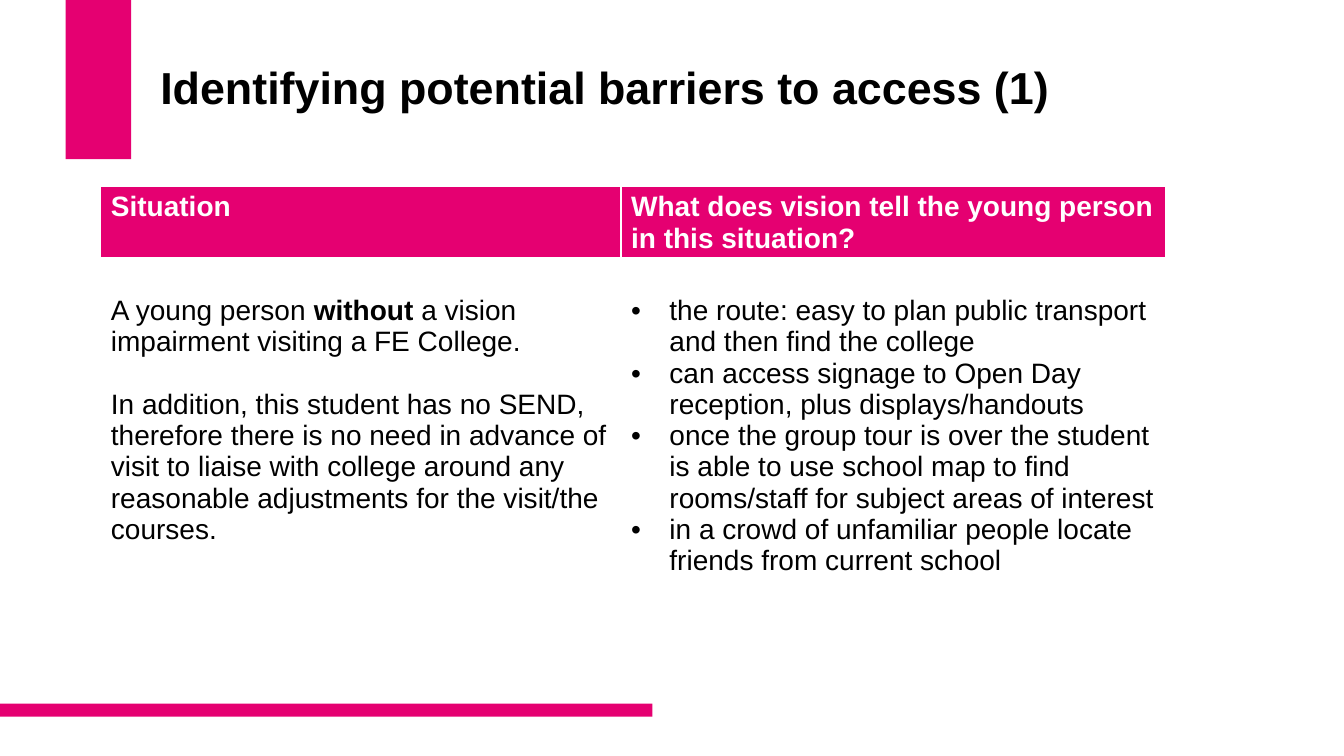
from dataclasses import dataclass

from lxml.etree import SubElement
from pptx import Presentation
from pptx.dml.color import RGBColor
from pptx.enum.shapes import MSO_SHAPE
from pptx.enum.text import MSO_ANCHOR, PP_ALIGN
from pptx.oxml import parse_xml
from pptx.oxml.ns import nsdecls, qn
from pptx.util import Inches, Pt

TITLE = "Identifying potential barriers to access (1)"
HEADINGS = ["Situation", "What does vision tell the young person in this situation?"]
SITUATION = [
    [("A young person ", False), ("without ", True),
     ("a vision impairment visiting a\u00a0FE College.", False)],
    [("In addition, this student has no SEND, therefore there is no need in advance of "
      "visit to liaise with college around any reasonable adjustments for the visit/the "
      "courses.", False)],
]
VISION_TELLS = [
    "the route: easy to plan public transport and then find the college",
    "can access signage to Open Day reception, plus displays/handouts",
    "once the group tour is over the student is able to use school map to find "
    "rooms/staff for subject areas of interest",
    "in a crowd of unfamiliar people locate friends from current school",
]

SLIDE_SIZE = (13.33, 7.5)
ACCENT_BARS = [(0.65, 0, 0.65, 1.58), (0, 6.98, 6.47, 0.13)]
TITLE_BOX = (1.49, 0.4, 9.6, 1.45)
TITLE_BOTTOM_INSET = 0.51
TABLE_ORIGIN = (1, 1.85)
COLUMN_WIDTHS = (5.16, 5.4)
ROW_HEIGHTS = (0.69, 4.21)
BODY_TOP_INSET = 0.36
BULLET_INDENT = 0.38


@dataclass(frozen=True)
class Theme:
    accent: RGBColor = RGBColor(0xE5, 0x00, 0x71)
    paper: RGBColor = RGBColor(0xFF, 0xFF, 0xFF)
    ink: RGBColor = RGBColor(0, 0, 0)
    font: str = "Arial"
    title_size: int = 32
    text_size: int = 20
    rule: int = 1
    heading_rule: int = 3


THEME = Theme()


def inches(values):
    return [Inches(value) for value in values]


def style(font, size, color, bold):
    font.name = THEME.font
    font.size = Pt(size)
    font.color.rgb = color
    font.bold = bold


def add_bar(slide, box):
    bar = slide.shapes.add_shape(MSO_SHAPE.RECTANGLE, *inches(box))
    bar.shadow.inherit = False
    bar.fill.solid()
    bar.fill.fore_color.rgb = THEME.accent
    bar.line.fill.background()


def place_title(slide):
    title = slide.shapes.title
    title.left, title.top, title.width, title.height = inches(TITLE_BOX)
    frame = title.text_frame
    frame.text = TITLE
    frame.word_wrap = True
    frame.vertical_anchor = MSO_ANCHOR.MIDDLE
    frame.margin_bottom = Inches(TITLE_BOTTOM_INSET)
    heading = frame.paragraphs[0]
    heading.alignment = PP_ALIGN.LEFT
    heading.line_spacing = 0.9
    style(heading.runs[0].font, THEME.title_size, THEME.ink, True)


def paint_cell(cell, color, bottom_rule):
    cell.fill.solid()
    cell.fill.fore_color.rgb = color
    properties = cell._tc.get_or_add_tcPr()
    for position, side in enumerate("LRTB"):
        width = Pt(bottom_rule if side == "B" else THEME.rule)
        properties.insert(position, parse_xml(
            f'<a:ln{side} {nsdecls("a")} w="{width}"><a:solidFill>'
            f'<a:srgbClr val="{THEME.paper}"/></a:solidFill></a:ln{side}>'))


def add_bullet(paragraph):
    properties = paragraph._p.get_or_add_pPr()
    properties.set("marL", str(Inches(BULLET_INDENT)))
    properties.set("indent", str(-Inches(BULLET_INDENT)))
    SubElement(properties, qn("a:buFont"), typeface=THEME.font)
    SubElement(properties, qn("a:buChar"), char="•")


def paragraphs_for(frame, count):
    return [frame.paragraphs[0]] + [frame.add_paragraph() for _ in range(count - 1)]


def fill_situation(frame):
    for index, paragraph in enumerate(paragraphs_for(frame, len(SITUATION))):
        if index:
            paragraph.space_before = Pt(22.4)
        for wording, bold in SITUATION[index]:
            run = paragraph.add_run()
            run.text = wording
            style(run.font, THEME.text_size, THEME.ink, bold)


def fill_vision(frame):
    points = paragraphs_for(frame, len(VISION_TELLS))
    for paragraph, wording in zip(points, VISION_TELLS):
        paragraph.text = wording
        add_bullet(paragraph)
        style(paragraph.runs[0].font, THEME.text_size, THEME.ink, False)


def add_situation_table(slide):
    table = slide.shapes.add_table(
        len(ROW_HEIGHTS), len(COLUMN_WIDTHS), *inches(TABLE_ORIGIN),
        Inches(sum(COLUMN_WIDTHS)), Inches(sum(ROW_HEIGHTS))).table
    table.horz_banding = False
    for column, width in zip(table.columns, COLUMN_WIDTHS):
        column.width = Inches(width)
    for row, height in zip(table.rows, ROW_HEIGHTS):
        row.height = Inches(height)
    for index, (heading, fill_body) in enumerate(zip(HEADINGS, (fill_situation, fill_vision))):
        header, body = table.cell(0, index), table.cell(1, index)
        paint_cell(header, THEME.accent, THEME.heading_rule)
        paint_cell(body, THEME.paper, THEME.rule)
        header.text_frame.text = heading
        style(header.text_frame.paragraphs[0].runs[0].font,
              THEME.text_size, THEME.paper, True)
        body.margin_top = Inches(BODY_TOP_INSET)
        fill_body(body.text_frame)


def main():
    deck = Presentation()
    deck.slide_width, deck.slide_height = inches(SLIDE_SIZE)
    slide = deck.slides.add_slide(deck.slide_layouts.get_by_name("Title Only"))
    for box in ACCENT_BARS:
        add_bar(slide, box)
    place_title(slide)
    add_situation_table(slide)
    deck.save("out.pptx")


if __name__ == "__main__":
    main()
